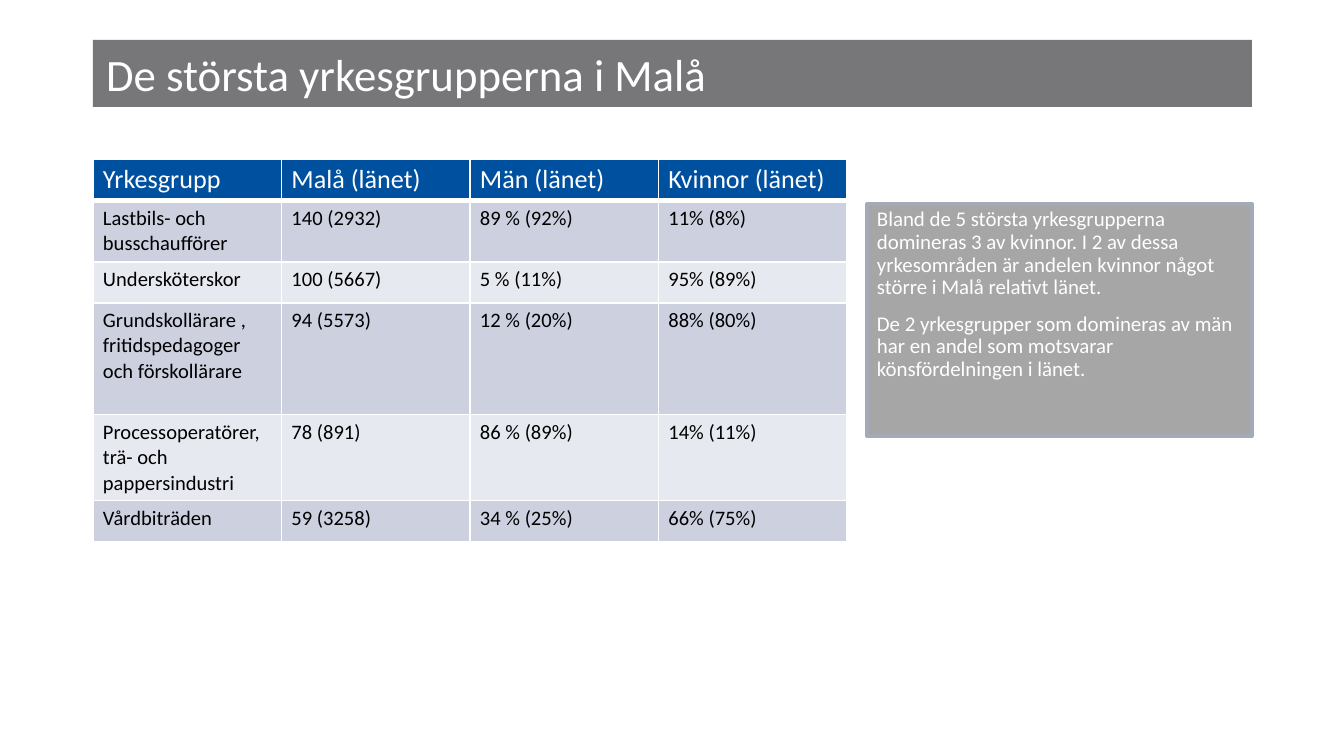
from lxml.etree import SubElement
from pptx import Presentation
from pptx.dml.color import RGBColor
from pptx.enum.shapes import MSO_SHAPE as Shape
from pptx.enum.text import MSO_ANCHOR as Anchor, PP_ALIGN as Align
from pptx.oxml.ns import qn
from pptx.util import Pt

SCALE = 914400 / 134.4
WHITE = RGBColor(0xFF, 0xFF, 0xFF)
BLACK = RGBColor(0x00, 0x00, 0x00)
TITLE_GRAY = RGBColor(0x77, 0x77, 0x7A)
NOTE_GRAY = RGBColor(0xA6, 0xA6, 0xA6)
NOTE_EDGE = RGBColor(0xA3, 0xAB, 0xB6)
HEADER_BLUE = RGBColor(0x00, 0x50, 0xA0)
BANDS = (RGBColor(0xCC, 0xD0, 0xDF), RGBColor(0xE7, 0xE9, 0xF0))

OCCUPATIONS = [
    ("Yrkesgrupp", "Malå (länet)", "Män (länet)", "Kvinnor (länet)"),
    ("Lastbils- och busschaufförer", "140 (2932)", "89 % (92%)", "11% (8%)"),
    ("Undersköterskor", "100 (5667)", "5 % (11%)", "95% (89%)"),
    ("Grundskollärare , fritidspedagoger och förskollärare",
     "94 (5573)", "12 % (20%)", "88% (80%)"),
    ("Processoperatörer, trä- och pappersindustri",
     "78 (891)", "86 % (89%)", "14% (11%)"),
    ("Vårdbiträden", "59 (3258)", "34 % (25%)", "66% (75%)"),
]
ROW_HEIGHTS = (41, 61, 41, 112, 86, 41)
COMMENTS = (
    "Bland de 5 största yrkesgrupperna domineras 3 av kvinnor. I 2 av dessa "
    "yrkesområden är andelen kvinnor något större i Malå relativt länet.",
    "De 2 yrkesgrupper som domineras av män har en andel som motsvarar "
    "könsfördelningen i länet.",
)


def px(length):
    return round(length * SCALE)


def write(frame, *texts, size, color=WHITE, font="Calibri", spacing=None, gap=0):
    frame.word_wrap = True
    for index, text in enumerate(texts):
        para = frame.add_paragraph() if index else frame.paragraphs[0]
        para.alignment = Align.LEFT
        if spacing:
            para.line_spacing = spacing
        if index:
            para.space_before = Pt(gap)
        span = para.add_run()
        span.text = text
        span.font.name = font
        span.font.size = Pt(size)
        span.font.bold = False
        span.font.color.rgb = color


def set_insets(target, across, down):
    target.margin_left = target.margin_right = px(across)
    target.margin_top = target.margin_bottom = px(down)


def set_border(cell, side, points):
    line = SubElement(cell._tc.get_or_add_tcPr(), qn(f"a:ln{side}"), w=str(Pt(points)))
    SubElement(SubElement(line, qn("a:solidFill")), qn("a:srgbClr"), val=str(WHITE))


class Page:
    """Holds the shared style and the slide being built."""

    def __init__(self, deck):
        self.insets = (10, 5)
        self.slide = deck.slides.add_slide(deck.slide_layouts[6])

    def box(self, left, top, width, height, fill, edge=None):
        box = self.slide.shapes.add_shape(
            Shape.RECTANGLE, px(left), px(top), px(width), px(height))
        box.shadow.inherit = False
        box.fill.solid()
        box.fill.fore_color.rgb = fill
        if edge:
            box.line.color.rgb = edge
            box.line.width = Pt(2)
        else:
            box.line.fill.background()
        return box.text_frame

    def title(self, text, *place):
        frame = self.box(*place, fill=TITLE_GRAY)
        frame.vertical_anchor = Anchor.MIDDLE
        write(frame, text, size=24)

    def note(self, texts, *place):
        frame = self.box(*place, fill=NOTE_GRAY, edge=NOTE_EDGE)
        frame.vertical_anchor = Anchor.TOP
        set_insets(frame, *self.insets)
        write(frame, *texts, size=11.2, spacing=0.9, gap=7.5)

    def table(self, rows, heights, left, top, width):
        table = self.slide.shapes.add_table(
            len(rows), len(rows[0]), px(left), px(top), px(width), px(sum(heights))).table
        for column in table.columns:
            column.width = px(width / len(rows[0]))
        for number, (values, height) in enumerate(zip(rows, heights)):
            table.rows[number].height = px(height)
            for column, value in enumerate(values):
                self.cell(table.cell(number, column), value, number)

    def cell(self, cell, value, number):
        header = number == 0
        set_insets(cell, *self.insets)
        for side in "LRTB":
            set_border(cell, side, 3 if header and side == "B" else 1)
        cell.fill.solid()
        cell.fill.fore_color.rgb = HEADER_BLUE if header else BANDS[(number - 1) % 2]
        write(cell.text_frame, value, size=14 if header else 11,
              color=WHITE if header else BLACK)


def main():
    deck = Presentation()
    deck.slide_width, deck.slide_height = px(1344), px(756)
    page = Page(deck)
    page.title("De största yrkesgrupperna i Malå", 93, 40, 1159, 67)
    page.table(OCCUPATIONS, ROW_HEIGHTS, 93, 159, 754)
    page.note(COMMENTS, 867, 204, 385, 232)
    deck.save("out.pptx")


if __name__ == "__main__":
    main()
